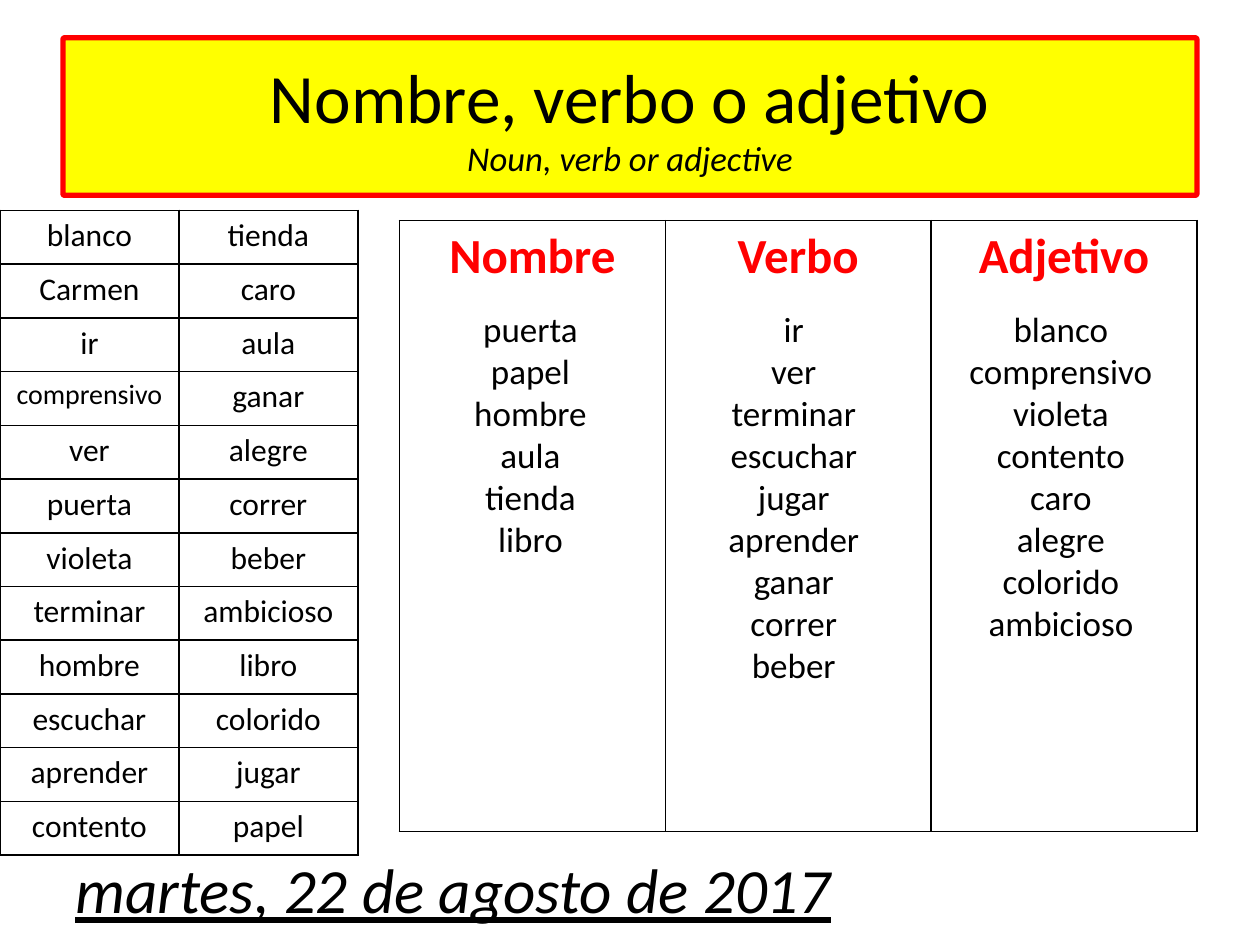
from lxml import etree
from pptx import Presentation
from pptx.dml.color import RGBColor
from pptx.enum import shapes, text
from pptx.oxml.ns import qn
from pptx.util import Inches, Pt

# Content
TITLE = "Nombre, verbo o adjetivo"
SUBTITLE = "Noun, verb or adjective"
DATE = "martes, 22 de agosto de 2017"
WORD_LISTS = [
    ["blanco", "Carmen", "ir", "comprensivo", "ver", "puerta", "violeta",
     "terminar", "hombre", "escuchar", "aprender", "contento"],
    ["tienda", "caro", "aula", "ganar", "alegre", "correer"[:4] + "er", "beber",
     "ambicioso", "libro", "colorido", "jugar", "papel"],
]
WORD_LISTS[1][5] = "correr"
SMALL_WORDS = {"comprensivo": 16}
ANSWERS = {
    "Nombre": ["puerta", "papel", "hombre", "aula", "tienda", "libro"],
    "Verbo": ["ir", "ver", "terminar", "escuchar", "jugar", "aprender",
              "ganar", "correr", "beber"],
    "Adjetivo": ["blanco", "comprensivo", "violeta", "contento", "caro",
                 "alegre", "colorido", "ambicioso"],
}
ANSWER_LEFTS = [3.25, 5.34, 7.46]
LINE_HEIGHT = 1 / 3
BLACK, RED, YELLOW = "000000", "FF0000", "FFFF00"


def color(value):
    return RGBColor.from_string(value)


def format_run(run, size, ink=BLACK, bold=False, italic=False, underline=False):
    font = run.font
    font.name, font.size, font.color.rgb = "Calibri", Pt(size), color(ink)
    font.bold, font.italic, font.underline = bold, italic, underline


def set_text(frame, content, size, align=text.PP_ALIGN.CENTER, **style):
    frame.text = content
    for paragraph in frame.paragraphs:
        paragraph.alignment = align
        for run in paragraph.runs:
            format_run(run, size, **style)


def add_borders(cell):
    properties = cell._tc.get_or_add_tcPr()
    for position, side in enumerate(("a:lnL", "a:lnR", "a:lnT", "a:lnB")):
        line = etree.Element(qn(side), w=str(Pt(1)))
        fill = etree.SubElement(line, qn("a:solidFill"))
        etree.SubElement(fill, qn("a:srgbClr"), val=BLACK)
        properties.insert(position, line)


def add_grid(slide, rows, left, top, width, height, size, small=None, **style):
    table = slide.shapes.add_table(
        len(rows), len(rows[0]), Inches(left), Inches(top),
        Inches(width), Inches(height)).table
    table.first_row = table.horz_banding = False
    for row, words in enumerate(rows):
        for column, word in enumerate(words):
            cell = table.cell(row, column)
            cell.fill.background()
            set_text(cell.text_frame, word, (small or {}).get(word, size), **style)
            add_borders(cell)


def add_text(slide, content, left, top, width, height, size, **style):
    box = slide.shapes.add_textbox(
        Inches(left), Inches(top), Inches(width), Inches(height))
    box.text_frame.word_wrap = True
    set_text(box.text_frame, content, size, **style)
    return box


presentation = Presentation()
presentation.slide_width, presentation.slide_height = Inches(10), Inches(7.5)
slide = presentation.slides.add_slide(presentation.slide_layouts[6])

# Title banner
banner = slide.shapes.add_shape(
    shapes.MSO_SHAPE.ROUNDED_RECTANGLE,
    Inches(0.5), Inches(0.3), Inches(9), Inches(1.25))
banner.adjustments[0] = 0.01
banner.shadow.inherit = False
banner.fill.solid()
banner.fill.fore_color.rgb = color(YELLOW)
banner.line.color.rgb = color(RED)
banner.line.width = Pt(3)
banner.text_frame.vertical_anchor = text.MSO_ANCHOR.MIDDLE
set_text(banner.text_frame, f"{TITLE}\v{SUBTITLE}", 39.6)
format_run(banner.text_frame.paragraphs[0].runs[1], 19.8, italic=True)

# Words to sort
for index, words in enumerate(WORD_LISTS):
    add_grid(slide, [[word] for word in words], 1.42 * index, 1.67, 1.42, 5.12,
             18, small=SMALL_WORDS)

# Sorting table with the answers over it
add_grid(slide, [list(ANSWERS)], 3.17, 1.75, 6.33, 4.85, 28, ink=RED, bold=True)
for left, words in zip(ANSWER_LEFTS, ANSWERS.values()):
    add_text(slide, "\n".join(words), left, 2.39, 1.92,
             len(words) * LINE_HEIGHT + 0.1, 20)

# Date
date = add_text(slide, DATE, 0.5, 6.75, 7.58, 0.6, 36,
                align=text.PP_ALIGN.LEFT, italic=True, underline=True)
date.text_frame.vertical_anchor = text.MSO_ANCHOR.MIDDLE

presentation.save("out.pptx")
